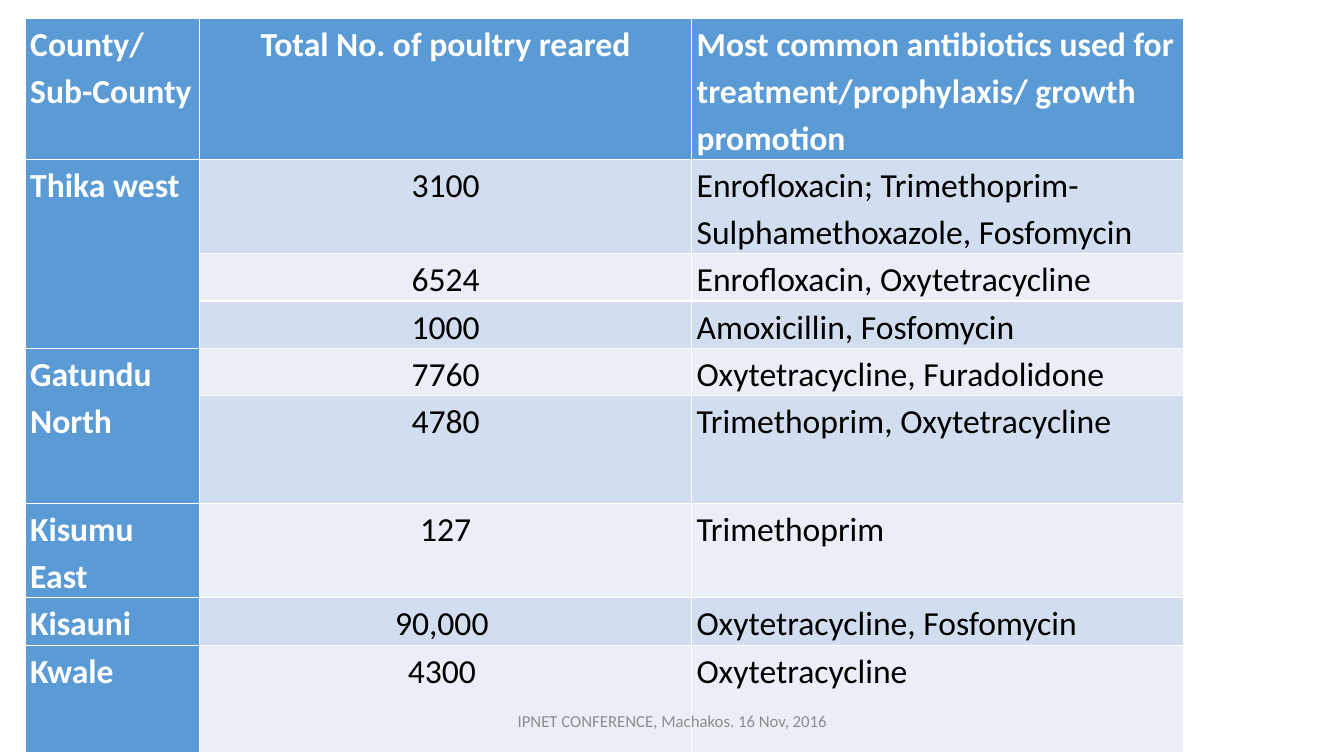
"""Build a slide with a table of poultry numbers and antibiotics by county."""
from pptx import Presentation
from pptx.dml.color import RGBColor
from pptx.enum.text import MSO_ANCHOR, PP_ALIGN
from pptx.util import Inches, Pt

LEFT, CENTER = PP_ALIGN.LEFT, PP_ALIGN.CENTER
MIDDLE = MSO_ANCHOR.MIDDLE
COLORS = {"head": "5B9BD5", "odd": "D2DEEF", "even": "EAEFF7",
          "white": "FFFFFF", "black": "000000", "gray": "8C8C8C"}
WIDTHS = [1.73, 4.88, 4.88]
HEIGHTS = [1.4, 0.93, 0.47, 0.47, 0.47, 1.07, 0.93, 0.47, 1.07]
ROWS = [
    ("County/Sub-County", "Total No. of poultry reared",
     "Most common antibiotics used for treatment/prophylaxis/ growth promotion"),
    ("Thika west", "3100",
     "Enrofloxacin; Trimethoprim- Sulphamethoxazole, Fosfomycin"),
    ("", "6524", "Enrofloxacin, Oxytetracycline"),
    ("", "1000", "Amoxicillin, Fosfomycin"),
    ("Gatundu North", "7760", "Oxytetracycline, Furadolidone"),
    ("", "4780", "Trimethoprim, Oxytetracycline"),
    ("Kisumu East", "127", "Trimethoprim"),
    ("Kisauni", "90,000 ", "Oxytetracycline, Fosfomycin"),
    ("Kwale", "4300 ", "Oxytetracycline"),
]
SPANS = [(1, 3), (4, 5)]
MARGINS = {"margin_left": Inches(0.05), "margin_right": Inches(0.05),
           "margin_top": 0, "margin_bottom": 0}


def write(para, text, size, color, align, bold=False):
    para.alignment = align
    run = para.add_run()
    run.text = text
    form = {"name": "Calibri", "size": Pt(size), "bold": bold}
    for key, value in form.items():
        setattr(run.font, key, value)
    run.font.color.rgb = RGBColor.from_string(COLORS[color])


prs = Presentation()
prs.slide_width, prs.slide_height = Inches(13.33), Inches(7.5)
slide = prs.slides.add_slide(prs.slide_layouts[6])

frame = slide.shapes.add_table(len(ROWS), len(WIDTHS), Inches(0.25), Inches(0.18),
                               Inches(sum(WIDTHS)), Inches(sum(HEIGHTS)))
table = frame.table
table.first_col = True
for col, width in zip(table.columns, WIDTHS):
    col.width = Inches(width)
for row, height in zip(table.rows, HEIGHTS):
    row.height = Inches(height)
for first, last in SPANS:
    table.cell(first, 0).merge(table.cell(last, 0))

for r, texts in enumerate(ROWS):
    for c, text in enumerate(texts):
        cell = table.cell(r, c)
        head = r == 0 or c == 0
        fill = "head" if head else "odd" if r % 2 else "even"
        cell.fill.solid()
        cell.fill.fore_color.rgb = RGBColor.from_string(COLORS[fill])
        for key, value in MARGINS.items():
            setattr(cell, key, value)
        if text:
            para = cell.text_frame.paragraphs[0]
            para.line_spacing = 1.15
            para.space_after = Pt(10)
            write(para, text, 24, "white" if head else "black",
                  CENTER if c == 1 else LEFT, head)

foot = slide.shapes.add_textbox(Inches(4.42), Inches(6.95), Inches(4.5), Inches(0.4))
foot.text_frame.word_wrap = True
foot.text_frame.vertical_anchor = MIDDLE
write(foot.text_frame.paragraphs[0], "IPNET CONFERENCE, Machakos. 16 Nov, 2016",
      12, "gray", CENTER)

prs.save("out.pptx")
